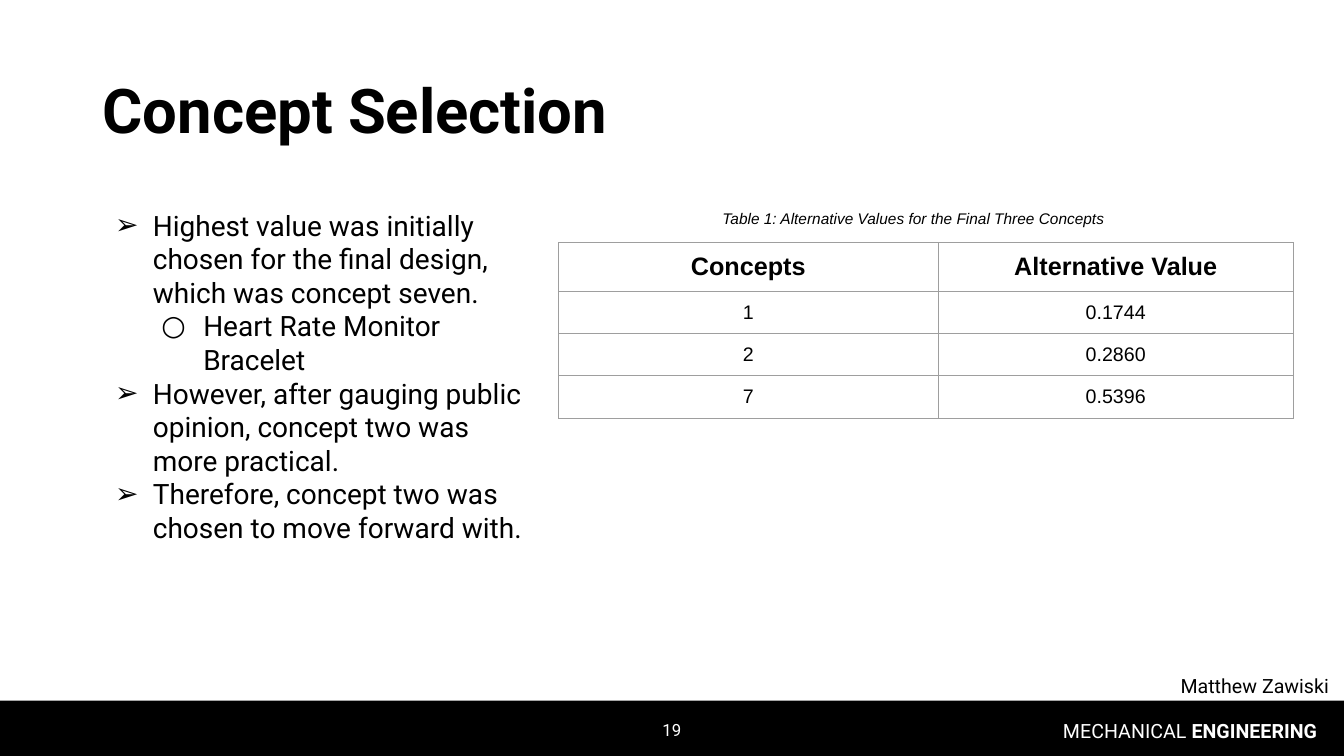
from dataclasses import dataclass

from lxml import etree
from pptx import Presentation
from pptx.dml.color import RGBColor
from pptx.enum.shapes import MSO_SHAPE
from pptx.enum.text import MSO_ANCHOR, MSO_AUTO_SIZE, PP_ALIGN
from pptx.oxml.ns import qn
from pptx.util import Pt

LEFT, CENTER, RIGHT = PP_ALIGN.LEFT, PP_ALIGN.CENTER, PP_ALIGN.RIGHT
TOP, MIDDLE = MSO_ANCHOR.TOP, MSO_ANCHOR.MIDDLE
RECTANGLE = MSO_SHAPE.RECTANGLE
NO_AUTOFIT = MSO_AUTO_SIZE.NONE
TWO_CONTENT = 3


@dataclass(frozen=True)
class Theme:
    """Hold the fonts, colours and type sizes of the slide."""
    heading_font: str = "Roboto"
    table_font: str = "Arial"
    ink: str = "000000"
    paper: str = "FFFFFF"
    border: str = "9E9E9E"
    title: int = 44
    body: int = 20
    table_head: int = 18
    small: int = 14
    number: int = 12
    caption: int = 11


THEME = Theme()
BULLETS = [
    (0, "Highest value was initially chosen for the final design, which was concept seven."),
    (1, "Heart Rate Monitor Bracelet"),
    (0, "However, after gauging public opinion, concept two was more practical."),
    (0, "Therefore, concept two was chosen to move forward with."),
]
BULLET_STYLES = [("➢", 36, -27), ("○", 72, -30)]
CONCEPT_ROWS = [
    ("Concepts", "Alternative Value"),
    ("1", "0.1744"),
    ("2", "0.2860"),
    ("7", "0.5396"),
]


def place(shape, left, top, width, height):
    """Set the position and size of a shape in points."""
    shape.left, shape.top = Pt(left), Pt(top)
    shape.width, shape.height = Pt(width), Pt(height)


def add_run(paragraph, text, size, color=THEME.ink, font=THEME.heading_font,
            bold=False, italic=False):
    """Append one formatted run to a paragraph."""
    run = paragraph.add_run()
    run.text = text
    run.font.name, run.font.size = font, Pt(size)
    run.font.bold, run.font.italic = bold, italic
    run.font.color.rgb = RGBColor.from_string(color)


def prepare_frame(shape, anchor=TOP):
    """Wrap the text of a shape, fix its size and return its text frame."""
    frame = shape.text_frame
    frame.word_wrap = True
    frame.auto_size = NO_AUTOFIT
    frame.vertical_anchor = anchor
    return frame


def format_paragraph(paragraph, alignment=LEFT, spacing=1.0):
    """Set alignment and line spacing and clear the space before."""
    paragraph.alignment = alignment
    paragraph.line_spacing = spacing
    paragraph.space_before = Pt(0)


def set_bullet(paragraph, character=None, margin=0, indent=0):
    """Give a paragraph a bullet character, or none."""
    properties = paragraph._p.get_or_add_pPr()
    properties.set("marL", str(Pt(margin)))
    properties.set("indent", str(Pt(indent)))
    if character is None:
        etree.SubElement(properties, qn("a:buNone"))
        return
    color = etree.SubElement(properties, qn("a:buClr"))
    etree.SubElement(color, qn("a:srgbClr"), val=THEME.ink)
    etree.SubElement(properties, qn("a:buFont"), typeface=THEME.heading_font)
    etree.SubElement(properties, qn("a:buChar"), char=character)


def add_label(slide, box, alignment=LEFT, spacing=1.0, anchor=TOP):
    """Add a text box and return its empty paragraph."""
    frame = prepare_frame(slide.shapes.add_textbox(*map(Pt, box)), anchor)
    format_paragraph(frame.paragraphs[0], alignment, spacing)
    return frame.paragraphs[0]


def add_footer(slide):
    """Draw the black bar with the page number and department name."""
    bar = slide.shapes.add_shape(RECTANGLE, Pt(0), Pt(500.4), Pt(960), Pt(39.6))
    bar.shadow.inherit = False
    bar.fill.solid()
    bar.fill.fore_color.rgb = RGBColor.from_string(THEME.ink)
    bar.line.fill.background()
    department = add_label(slide, (732, 510, 216, 29), RIGHT)
    add_run(department, "MECHANICAL ", THEME.small, THEME.paper)
    add_run(department, "ENGINEERING", THEME.small, THEME.paper, bold=True)
    number = add_label(slide, (372, 507, 216, 29), CENTER, anchor=MIDDLE)
    add_run(number, "19", THEME.number, THEME.paper)


def fill_title(title):
    """Place and write the title."""
    place(title, 66, 29, 828, 104)
    paragraph = prepare_frame(title, MIDDLE).paragraphs[0]
    format_paragraph(paragraph, spacing=0.9)
    add_run(paragraph, "Concept Selection", THEME.title, bold=True)


def fill_bullets(body):
    """Place and write the two-level list."""
    place(body, 66, 145, 321, 318)
    frame = prepare_frame(body)
    for index, (level, text) in enumerate(BULLETS):
        paragraph = frame.add_paragraph() if index else frame.paragraphs[0]
        paragraph.level = level
        set_bullet(paragraph, *BULLET_STYLES[level])
        format_paragraph(paragraph)
        add_run(paragraph, text, THEME.body)


def fill_author(author):
    """Place and write the presenter's name."""
    place(author, 708, 480, 252, 18)
    paragraph = prepare_frame(author).paragraphs[0]
    set_bullet(paragraph)
    format_paragraph(paragraph, RIGHT, 0.9)
    add_run(paragraph, "Matthew Zawiski ", THEME.small)


def set_borders(cell):
    """Draw a thin grey line on each side of a cell."""
    properties = cell._tc.get_or_add_tcPr()
    for side in ("a:lnL", "a:lnR", "a:lnT", "a:lnB"):
        line = etree.SubElement(properties, qn(side), w=str(Pt(0.75)))
        fill = etree.SubElement(line, qn("a:solidFill"))
        etree.SubElement(fill, qn("a:srgbClr"), val=THEME.border)


def fill_cell(cell, text, header):
    """Format one table cell and write its text."""
    cell.margin_left = cell.margin_right = Pt(7.2)
    cell.margin_top = cell.margin_bottom = Pt(7.2)
    set_borders(cell)
    cell.fill.background()
    paragraph = cell.text_frame.paragraphs[0]
    paragraph.alignment = CENTER
    size = THEME.table_head if header else THEME.small
    add_run(paragraph, text, size, font=THEME.table_font, bold=header)


def add_concept_table(slide):
    """Add the captioned table of concept values."""
    frame = slide.shapes.add_table(len(CONCEPT_ROWS), 2, Pt(399), Pt(173.2),
                                   Pt(525), Pt(125))
    table = frame.table
    table.first_row = table.horz_banding = False
    table.columns[0].width, table.columns[1].width = Pt(271), Pt(254)
    for row_index, values in enumerate(CONCEPT_ROWS):
        header = row_index == 0
        table.rows[row_index].height = Pt(35 if header else 30)
        for column_index, value in enumerate(values):
            fill_cell(table.cell(row_index, column_index), value, header)
    caption = add_label(slide, (509, 144, 305, 33), spacing=1.15)
    add_run(caption, "Table 1: Alternative Values for the Final Three Concepts",
            THEME.caption, font=THEME.table_font, italic=True)


def main():
    """Build and save the slide."""
    presentation = Presentation()
    presentation.slide_width, presentation.slide_height = Pt(960), Pt(540)
    slide = presentation.slides.add_slide(presentation.slide_layouts[TWO_CONTENT])
    add_footer(slide)
    fill_title(slide.shapes.title)
    fill_bullets(slide.placeholders[1])
    fill_author(slide.placeholders[2])
    add_concept_table(slide)
    presentation.save("out.pptx")


if __name__ == "__main__":
    main()
